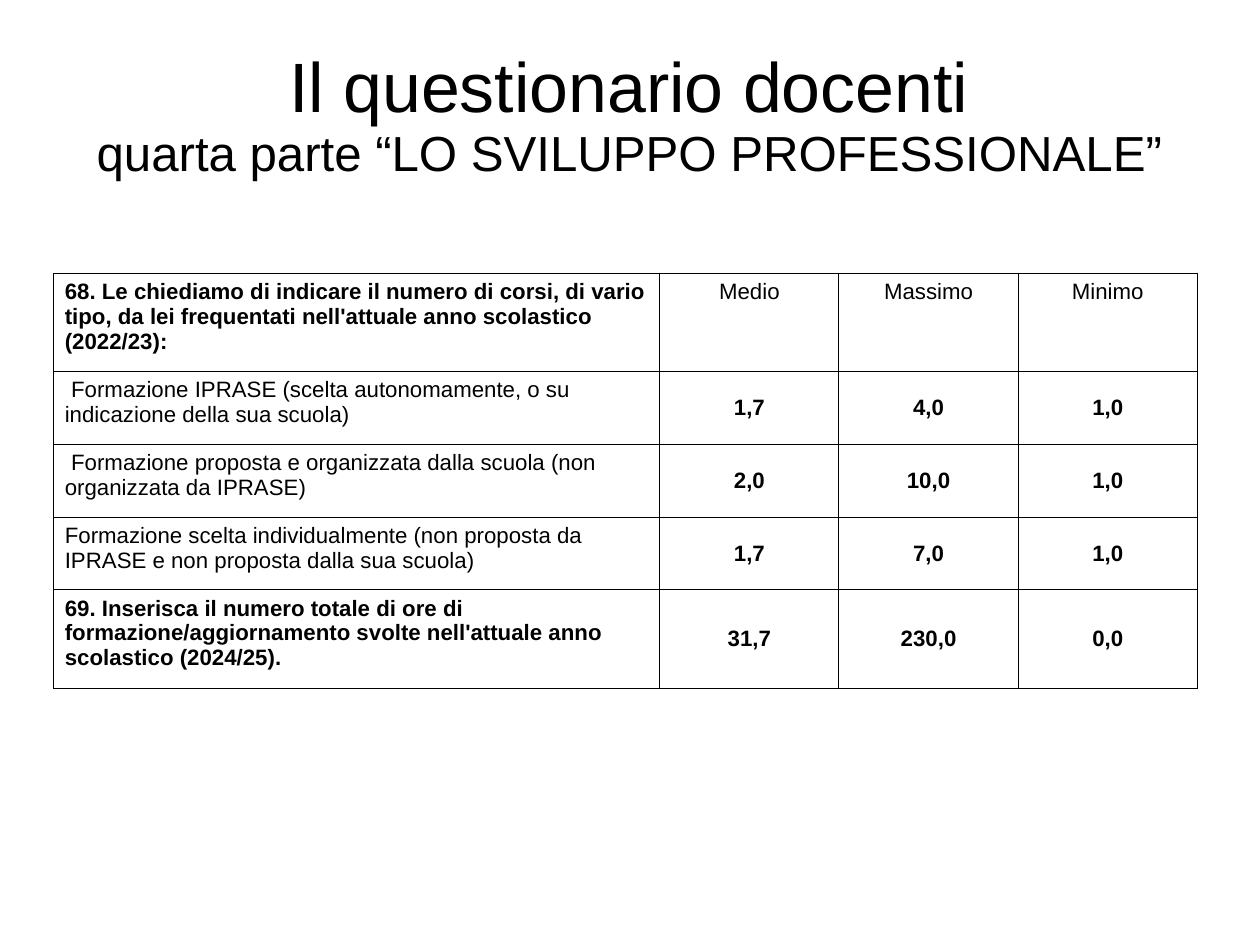
from dataclasses import dataclass

from lxml.etree import SubElement
from pptx import Presentation
from pptx.dml.color import RGBColor
from pptx.enum.text import MSO_ANCHOR as Anchor, PP_ALIGN as Align
from pptx.oxml.ns import qn
from pptx.util import Cm, Pt


@dataclass(frozen=True)
class Theme:
    """Colours, font and type sizes of the slide."""
    font: str = "Arial"
    ink: str = "000000"
    paper: str = "FFFFFF"
    title_size: float = 44
    subtitle_size: float = 31
    table_size: float = 14
    border: float = 0.75


@dataclass(frozen=True)
class Box:
    """A region of the slide, in centimetres."""
    left: float
    top: float
    width: float
    height: float

    def lengths(self):
        """Return left, top, width and height as lengths."""
        return [Cm(value) for value in (self.left, self.top, self.width, self.height)]


@dataclass(frozen=True)
class Question:
    """A table row: its wording, its values and its look."""
    text: str
    values: tuple
    height: float
    bold: bool = False
    header: bool = False
    indent: float = 0


THEME = Theme()
TITLE_BOX = Box(1.4, 0.84, 25.17, 3.5)
TABLE_BOX = Box(1.19, 6.07, 25.42, 9.22)
LABEL_SHARE = 0.53
TALL, SHORT = 2.18, 1.62
SPACE = 0.14
QUESTIONS = (
    Question("68. Le chiediamo di indicare il numero di corsi, di vario tipo, da lei "
             "frequentati nell'attuale anno scolastico (2022/23):",
             ("Medio", "Massimo", "Minimo"), TALL, bold=True, header=True),
    Question("Formazione IPRASE (scelta autonomamente, o su indicazione della sua scuola)",
             ("1,7", "4,0", "1,0"), SHORT, indent=SPACE),
    Question("Formazione proposta e organizzata dalla scuola (non organizzata da IPRASE)",
             ("2,0", "10,0", "1,0"), SHORT, indent=SPACE),
    Question("Formazione scelta individualmente (non proposta da IPRASE e non proposta "
             "dalla sua scuola)",
             ("1,7", "7,0", "1,0"), SHORT),
    Question("69. Inserisca il numero totale di ore di formazione/aggiornamento svolte "
             "nell'attuale anno scolastico (2024/25).",
             ("31,7", "230,0", "0,0"), TALL, bold=True),
)


def add_run(paragraph, text, size, bold=False):
    """Add one run in the theme's font and ink."""
    run = paragraph.add_run()
    run.text = text
    run.font.name = THEME.font
    run.font.size = Pt(size)
    run.font.bold = bold
    run.font.color.rgb = RGBColor.from_string(THEME.ink)


def add_title(slide, box):
    """Place the two-line title centred in its box."""
    frame = slide.shapes.add_textbox(*box.lengths()).text_frame
    frame.word_wrap = True
    frame.vertical_anchor = Anchor.MIDDLE
    frame.margin_left = frame.margin_right = frame.margin_top = frame.margin_bottom = 0
    paragraph = frame.paragraphs[0]
    paragraph.alignment = Align.CENTER
    paragraph.line_spacing = 0.93
    add_run(paragraph, "Il questionario docenti", THEME.title_size)
    paragraph.add_line_break()
    add_run(paragraph, "quarta parte “LO SVILUPPO PROFESSIONALE”", THEME.subtitle_size)


def add_borders(cell):
    """Draw a thin line on each side of a cell."""
    properties = cell._tc.get_or_add_tcPr()
    for position, side in enumerate(("lnL", "lnR", "lnT", "lnB")):
        line = SubElement(properties, qn(f"a:{side}"), w=str(Pt(THEME.border)))
        fill = SubElement(line, qn("a:solidFill"))
        SubElement(fill, qn("a:srgbClr"), val=THEME.ink)
        properties.insert(position, line)


def fill_cell(cell, text, bold, alignment, anchor, indent=0):
    """Write one cell with its fill, borders and text."""
    cell.fill.solid()
    cell.fill.fore_color.rgb = RGBColor.from_string(THEME.paper)
    add_borders(cell)
    cell.vertical_anchor = anchor
    cell.margin_left = cell.margin_right = Cm(0.25)
    cell.margin_top = cell.margin_bottom = Cm(0.13)
    paragraph = cell.text_frame.paragraphs[0]
    paragraph.alignment = alignment
    if indent:
        properties = paragraph._p.get_or_add_pPr()
        properties.set("marL", "0")
        properties.set("indent", str(Cm(indent)))
    add_run(paragraph, text, THEME.table_size, bold)


def add_question_table(slide, box, questions):
    """Place the table of questions and their three statistics."""
    value_count = len(questions[0].values)
    table = slide.shapes.add_table(len(questions), value_count + 1, *box.lengths()).table
    table.first_row = table.horz_banding = False
    label_width = box.width * LABEL_SHARE
    value_width = (box.width - label_width) / value_count
    for column, width in zip(table.columns, [label_width] + [value_width] * value_count):
        column.width = Cm(width)
    for index, question in enumerate(questions):
        table.rows[index].height = Cm(question.height)
        fill_cell(table.cell(index, 0), question.text, question.bold,
                  Align.LEFT, Anchor.TOP, question.indent)
        anchor = Anchor.TOP if question.header else Anchor.MIDDLE
        for column, value in enumerate(question.values, 1):
            fill_cell(table.cell(index, column), value, not question.header,
                      Align.CENTER, anchor)


def main():
    """Build the slide and save it."""
    presentation = Presentation()
    presentation.slide_width, presentation.slide_height = Cm(28), Cm(21)
    slide = presentation.slides.add_slide(presentation.slide_layouts[6])
    add_title(slide, TITLE_BOX)
    add_question_table(slide, TABLE_BOX, QUESTIONS)
    presentation.save("out.pptx")


if __name__ == "__main__":
    main()
